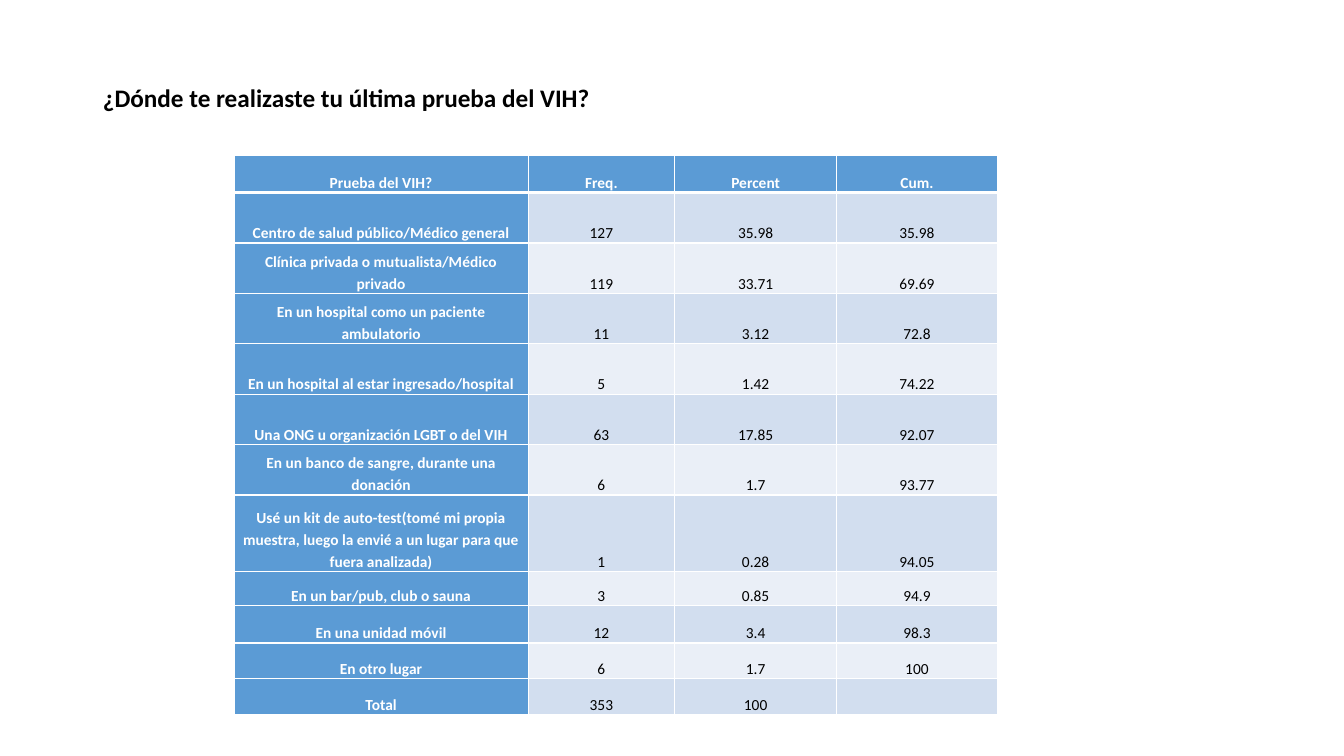
from dataclasses import dataclass

from lxml import etree
from pptx import Presentation
from pptx.dml.color import RGBColor
from pptx.enum.text import MSO_ANCHOR, PP_ALIGN
from pptx.oxml.ns import qn
from pptx.util import Pt

LEFT, CENTER = PP_ALIGN.LEFT, PP_ALIGN.CENTER
MIDDLE, BOTTOM = MSO_ANCHOR.MIDDLE, MSO_ANCHOR.BOTTOM
TITLE_ONLY = 5
EMU_PER_PX = 9144  # 100 px to the inch

COLUMN_WIDTHS = [292, 145, 161, 159]
ROW_HEIGHTS = [37] + [50] * 6 + [76, 34, 37, 35, 36]
TEST_PLACES = [
    ("Prueba del VIH?", "Freq.", "Percent", "Cum."),
    ("Centro de salud público/Médico general", "127", "35.98", "35.98"),
    ("Clínica privada o mutualista/Médico privado", "119", "33.71", "69.69"),
    ("En un hospital como un paciente ambulatorio", "11", "3.12", "72.8"),
    ("En un hospital al estar ingresado/hospital", "5", "1.42", "74.22"),
    ("Una ONG u organización LGBT o del VIH", "63", "17.85", "92.07"),
    ("En un banco de sangre, durante una donación", "6", "1.7", "93.77"),
    ("Usé un kit de auto-test(tomé mi propia muestra, luego la envié a un lugar "
     "para que fuera analizada)", "1", "0.28", "94.05"),
    ("En un bar/pub, club o sauna", "3", "0.85", "94.9"),
    ("En una unidad móvil", "12", "3.4", "98.3"),
    ("En otro lugar", "6", "1.7", "100"),
    ("Total", "353", "100", ""),
]


@dataclass(frozen=True)
class Theme:
    font: str = "Calibri"
    title_size: int = 18
    table_size: int = 11
    text: str = "000000"
    inverse: str = "FFFFFF"
    heading: str = "5B9BD5"
    odd_band: str = "D2DEEF"
    even_band: str = "EAEFF7"
    border: str = "FFFFFF"
    thin: int = 1
    thick: int = 3


def px(length):
    return length * EMU_PER_PX


class SlideBuilder:
    def __init__(self, slide, theme):
        self.slide = slide
        self.theme = theme

    def format_text(self, frame, size, color, bold, align, spacing):
        for para in frame.paragraphs:
            para.alignment = align
            para.line_spacing = spacing
            for span in para.runs:
                span.font.name = self.theme.font
                span.font.size = Pt(size)
                span.font.bold = bold
                span.font.color.rgb = RGBColor.from_string(color)

    def title(self, text, left, top, width, height):
        box = self.slide.shapes.title
        box.left, box.top, box.width, box.height = map(px, (left, top, width, height))
        frame = box.text_frame
        frame.text = text
        frame.word_wrap = True
        frame.vertical_anchor = MIDDLE
        frame.margin_bottom = px(32)  # lifts the line above the middle
        self.format_text(frame, self.theme.title_size, self.theme.text, True, LEFT, 0.9)

    def border(self, cell, side, width):
        line = etree.SubElement(cell._tc.get_or_add_tcPr(), qn(f"a:ln{side}"), w=str(Pt(width)))
        fill = etree.SubElement(line, qn("a:solidFill"))
        etree.SubElement(fill, qn("a:srgbClr"), val=self.theme.border)

    def cell(self, cell, text, row, column):
        theme = self.theme
        is_heading = row == 0 or column == 0
        band = theme.odd_band if row % 2 else theme.even_band
        thick_side = {0: "B", 1: "T"}.get(row)
        for side in "LRTB":
            self.border(cell, side, theme.thick if side == thick_side else theme.thin)
        cell.fill.solid()
        cell.fill.fore_color.rgb = RGBColor.from_string(theme.heading if is_heading else band)
        cell.vertical_anchor = BOTTOM
        cell.margin_left = cell.margin_right = px(5)
        cell.margin_top = cell.margin_bottom = 0
        cell.text_frame.text = text
        color = theme.inverse if is_heading else theme.text
        self.format_text(cell.text_frame, theme.table_size, color, is_heading, CENTER, 1.15)

    def table(self, rows, left, top, widths, heights):
        bounds = map(px, (left, top, sum(widths), sum(heights)))
        table = self.slide.shapes.add_table(len(heights), len(widths), *bounds).table
        table.horz_banding = False
        for column, width in zip(table.columns, widths):
            column.width = px(width)
        for row, height in zip(table.rows, heights):
            row.height = px(height)
        for row, texts in enumerate(rows):
            for column, text in enumerate(texts):
                self.cell(table.cell(row, column), text, row, column)


def main():
    deck = Presentation()
    deck.slide_width, deck.slide_height = px(1333), px(750)
    page = SlideBuilder(deck.slides.add_slide(deck.slide_layouts[TITLE_ONLY]), Theme())
    page.title("¿Dónde te realizaste tu última prueba del VIH?", 92, 40, 1150, 145)
    page.table(TEST_PLACES, 232, 154, COLUMN_WIDTHS, ROW_HEIGHTS)
    deck.save("out.pptx")


if __name__ == "__main__":
    main()
